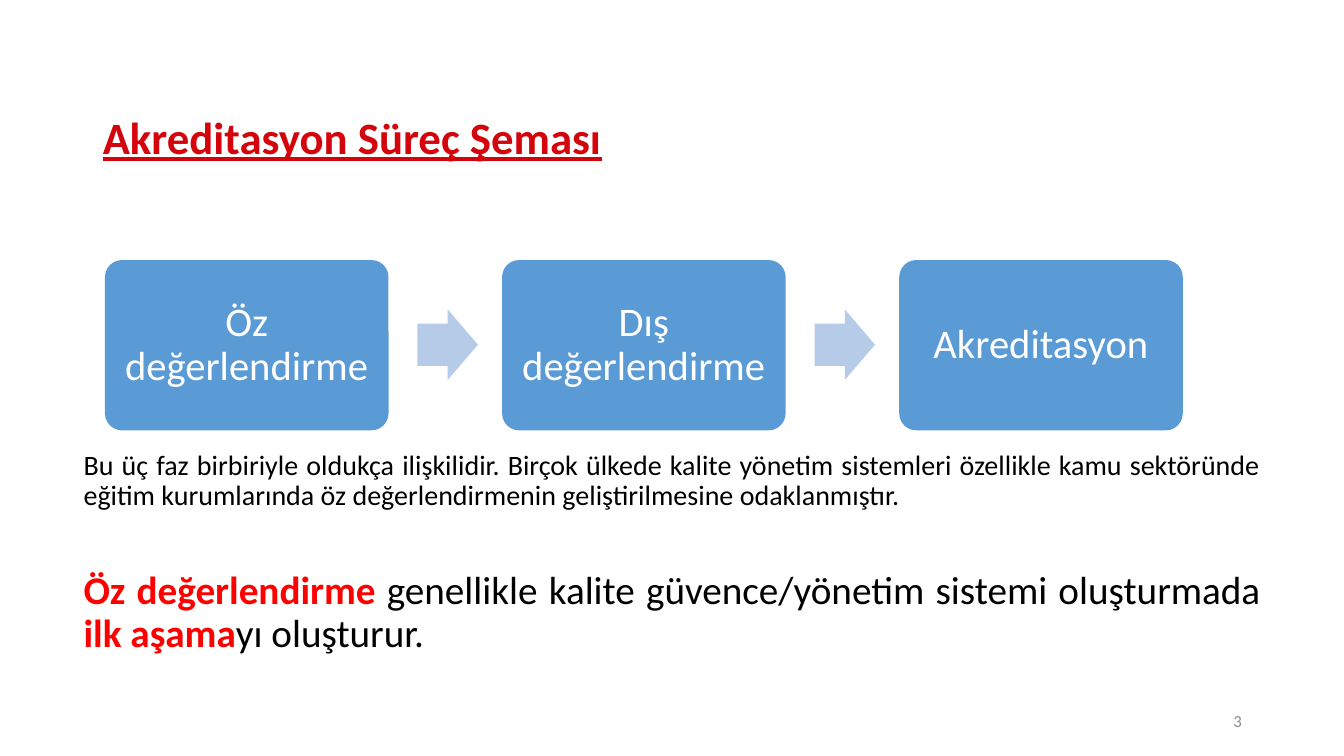
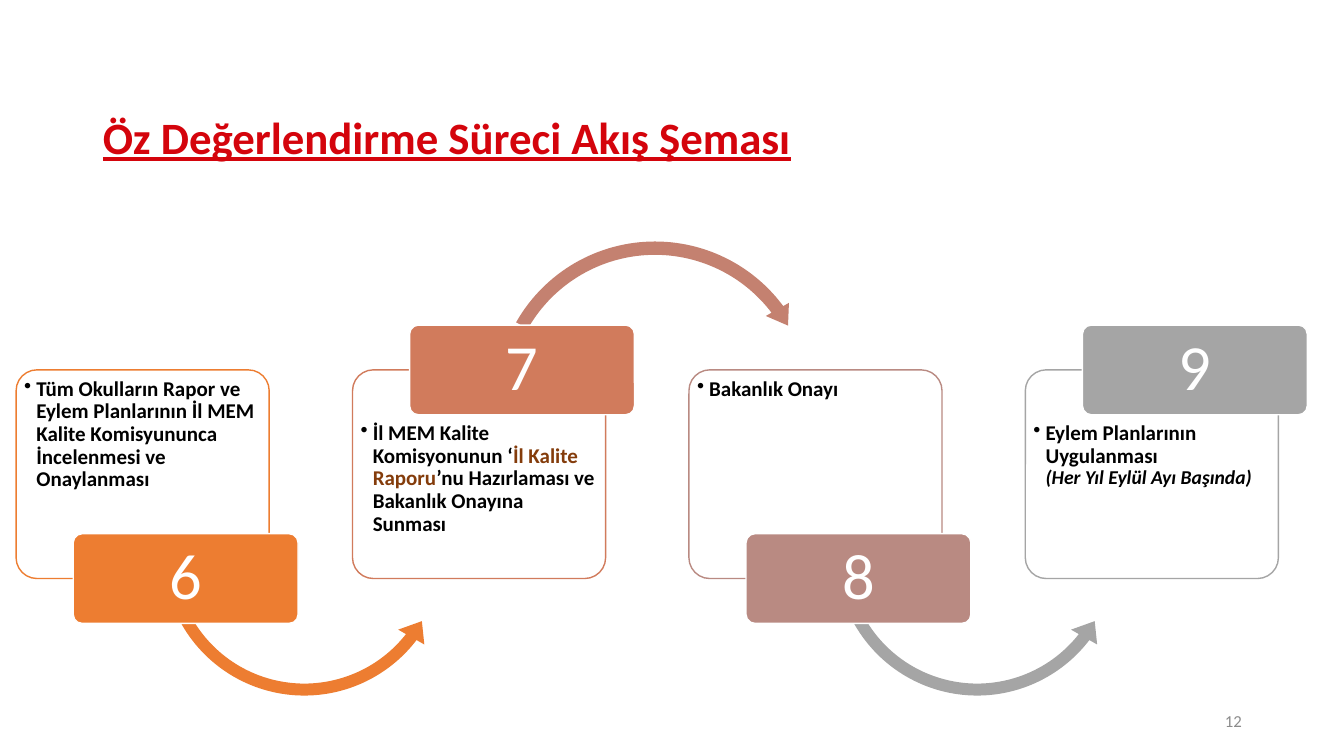
from typing import NamedTuple

from lxml.etree import SubElement
from pptx import Presentation
from pptx.dml.color import RGBColor
from pptx.enum.shapes import MSO_SHAPE
from pptx.enum.text import MSO_ANCHOR, MSO_AUTO_SIZE, PP_ALIGN
from pptx.oxml.ns import qn
from pptx.util import Inches, Pt

# Shared look
SLIDE_WIDTH, SLIDE_HEIGHT = Inches(13.333), Inches(7.5)
FONT = "Calibri"
WHITE, BLACK, RED = "FFFFFF", "000000", "FF0000"
TITLE_RED, NUMBER_GREY = "D4040C", "8C8C8C"
STEP_BLUE, ARROW_BLUE = "5B9BD5", "B5CBE7"
ORANGE, CORAL, ROSE, GREY, BROWN = "ED7D31", "D17B5C", "B98A82", "A5A5A5", "843C0B"
ARC_CORAL = "C48170"


class Area(NamedTuple):
    """Place and size in percent of the slide's width and height."""
    left: float
    top: float
    width: float
    height: float

    def lengths(self) -> tuple[int, int, int, int]:
        return (int(SLIDE_WIDTH * self.left / 100), int(SLIDE_HEIGHT * self.top / 100),
                int(SLIDE_WIDTH * self.width / 100), int(SLIDE_HEIGHT * self.height / 100))


class Span(NamedTuple):
    text: str
    color: str = BLACK
    size: float = 15
    bold: bool = False
    italic: bool = False
    underline: bool = False
    new_line: bool = False


class Arc(NamedTuple):
    """A curved arrow, its left edge measured from the panel."""
    shape: MSO_SHAPE
    area: Area
    adjustments: tuple[float, ...]
    color: str


class Stage(NamedTuple):
    number: str
    color: str
    spans: list[Span]
    arc: Arc | None = None


TITLE_AREA = Area(6.9, 12.93, 93.1, 11.2)
NUMBER_AREA = Area(70.65, 92.67, 22.5, 5.33)

# Slide 1: three steps in a row
STEPS = ["Öz değerlendirme", "Dış değerlendirme", "Akreditasyon"]
STEP_AREA = Area(7.81, 34.4, 21.1, 22.53)
STEP_ARROW_AREA = Area(31.06, 40.93, 4.5, 9.33)
STEP_PITCH = 29.55
BODY_AREA = Area(5.48, 59.07, 89.03, 28.67)

# Slide 2: panels with number badges, alternately below and above
PANEL_AREA = Area(1.2, 48.93, 18.83, 27.6)
PANEL_PITCH = 25.03
BADGE_OFFSET, BADGE_WIDTH, BADGE_HEIGHT = 4.25, 16.73, 11.87


def arc_below(color: str) -> Arc:
    return Arc(MSO_SHAPE.LEFT_CIRCULAR_ARROW, Area(10.27, 53.47, 22.35, 39.73),
               (0.04, 4.87, 22.62, 90.25, 0.05), color)


ARC_ABOVE = Arc(MSO_SHAPE.CIRCULAR_ARROW, Area(10.13, 31.07, 24.75, 44),
                (0.04, 4.35, 193.89, 125.76, 0.04), ARC_CORAL)

STAGES = [
    Stage("6", ORANGE, [Span("Tüm Okulların Rapor ve Eylem Planlarının İl MEM Kalite "
                             "Komisyununca İncelenmesi ve Onaylanması", bold=True)],
          arc_below(ORANGE)),
    Stage("7", CORAL, [Span("İl MEM Kalite Komisyonunun ‘", bold=True),
                       Span("İl Kalite Raporu", BROWN, bold=True),
                       Span("’nu Hazırlaması ve Bakanlık Onayına Sunması", bold=True)],
          ARC_ABOVE),
    Stage("8", ROSE, [Span("Bakanlık Onayı", bold=True)], arc_below(GREY)),
    Stage("9", GREY, [Span("Eylem Planlarının Uygulanması", bold=True),
                      Span("(Her Yıl Eylül Ayı Başında)", size=14, bold=True,
                           italic=True, new_line=True)]),
]


def rgb(color: str) -> RGBColor:
    return RGBColor.from_string(color)


def place(box, area: Area) -> None:
    box.left, box.top, box.width, box.height = area.lengths()


def write(box, paragraphs: list[list[Span]], *, align=PP_ALIGN.LEFT,
          anchor=MSO_ANCHOR.MIDDLE, insets=(0.1, 0.05, 0.1, 0.05),
          line_spacing: float = 0.9, gap: float = 0, bullet: bool = False) -> None:
    """Fill a box with paragraphs; insets are left, top, right, bottom in inches."""
    frame = box.text_frame
    frame.word_wrap = True
    frame.auto_size = MSO_AUTO_SIZE.NONE
    frame.vertical_anchor = anchor
    (frame.margin_left, frame.margin_top,
     frame.margin_right, frame.margin_bottom) = map(Inches, insets)
    for index, spans in enumerate(paragraphs):
        para = frame.add_paragraph() if index else frame.paragraphs[0]
        para.alignment = align
        para.line_spacing = line_spacing
        para.space_before = Pt(gap if index else 0)
        if bullet:
            properties = para._p.get_or_add_pPr()
            properties.set("marL", str(Inches(0.12)))
            properties.set("indent", str(-Inches(0.12)))
            SubElement(properties, qn("a:buChar")).set("char", "•")
        for span in spans:
            if span.new_line:
                para.add_line_break()
            run = para.add_run()
            run.text = span.text
            font = run.font
            font.name, font.size, font.color.rgb = FONT, Pt(span.size), rgb(span.color)
            font.bold, font.italic, font.underline = span.bold, span.italic, span.underline


def add_shape(page, shape: MSO_SHAPE, area: Area, fill: str, *,
              line: str | None = None, adjustments: tuple[float, ...] = ()):
    box = page.shapes.add_shape(shape, *area.lengths())
    box.shadow.inherit = False
    box.fill.solid()
    box.fill.fore_color.rgb = rgb(fill)
    if line:
        box.line.color.rgb = rgb(line)
        box.line.width = Pt(1)
    else:
        box.line.fill.background()
    for index, value in enumerate(adjustments):
        box.adjustments[index] = value
    return box


def add_text(page, area: Area, paragraphs: list[list[Span]], **layout) -> None:
    write(page.shapes.add_textbox(*area.lengths()), paragraphs, **layout)


def add_page(deck, title: str, number: str):
    page = deck.slides.add_slide(deck.slide_layouts[5])
    place(page.shapes.title, TITLE_AREA)
    write(page.shapes.title, [[Span(title, TITLE_RED, 32, bold=True, underline=True)]])
    add_text(page, NUMBER_AREA, [[Span(number, NUMBER_GREY, 12)]],
             align=PP_ALIGN.RIGHT, line_spacing=1)
    return page


def add_steps(page) -> None:
    for index, label in enumerate(STEPS):
        shift = index * STEP_PITCH
        box = add_shape(page, MSO_SHAPE.ROUNDED_RECTANGLE,
                        STEP_AREA._replace(left=STEP_AREA.left + shift),
                        STEP_BLUE, adjustments=(0.1,))
        write(box, [[Span(label, WHITE, 29)]], align=PP_ALIGN.CENTER, insets=(0.12,) * 4)
        if index < len(STEPS) - 1:
            add_shape(page, MSO_SHAPE.RIGHT_ARROW,
                      STEP_ARROW_AREA._replace(left=STEP_ARROW_AREA.left + shift),
                      ARROW_BLUE, adjustments=(0.6, 0.5))


def add_stage(page, stage: Stage, index: int) -> None:
    area = PANEL_AREA._replace(left=PANEL_AREA.left + index * PANEL_PITCH)
    badge_above = index % 2 == 1
    # Panel
    panel = add_shape(page, MSO_SHAPE.ROUNDED_RECTANGLE, area, WHITE,
                      line=stage.color, adjustments=(0.1,))
    write(panel, [stage.spans], anchor=MSO_ANCHOR.TOP, bullet=True,
          insets=(0.02, 0.46 if badge_above else 0.02, 0.02, 0.02))
    # Curved arrow to the next stage
    if stage.arc:
        arc = stage.arc
        add_shape(page, arc.shape, arc.area._replace(left=area.left + arc.area.left),
                  arc.color, adjustments=arc.adjustments)
    # Badge centred on the panel's edge
    edge = area.top if badge_above else area.top + area.height
    badge = add_shape(page, MSO_SHAPE.ROUNDED_RECTANGLE,
                      Area(area.left + BADGE_OFFSET, edge - BADGE_HEIGHT / 2,
                           BADGE_WIDTH, BADGE_HEIGHT),
                      stage.color, line=WHITE, adjustments=(0.1,))
    write(badge, [[Span(stage.number, WHITE, 46)]], align=PP_ALIGN.CENTER,
          insets=(0.1, 0.06, 0.1, 0.06))


def main() -> None:
    deck = Presentation()
    deck.slide_width, deck.slide_height = SLIDE_WIDTH, SLIDE_HEIGHT

    page = add_page(deck, "Akreditasyon Süreç Şeması", "3")
    add_text(page, BODY_AREA, [
        [Span("Bu üç faz birbiriyle oldukça ilişkilidir. Birçok ülkede kalite yönetim "
              "sistemleri özellikle kamu sektöründe eğitim kurumlarında öz "
              "değerlendirmenin geliştirilmesine odaklanmıştır.", size=20)],
        [Span("Öz değerlendirme", RED, 28, bold=True),
         Span(" genellikle kalite güvence/yönetim sistemi oluşturmada ", size=28),
         Span("ilk aşama", RED, 28, bold=True),
         Span("yı oluşturur.", size=28)],
    ], align=PP_ALIGN.JUSTIFY, anchor=MSO_ANCHOR.TOP, gap=42)
    add_steps(page)

    page = add_page(deck, "Öz Değerlendirme Süreci Akış Şeması", "12")
    for index, stage in enumerate(STAGES):
        add_stage(page, stage, index)

    deck.save("out.pptx")


if __name__ == "__main__":
    main()
